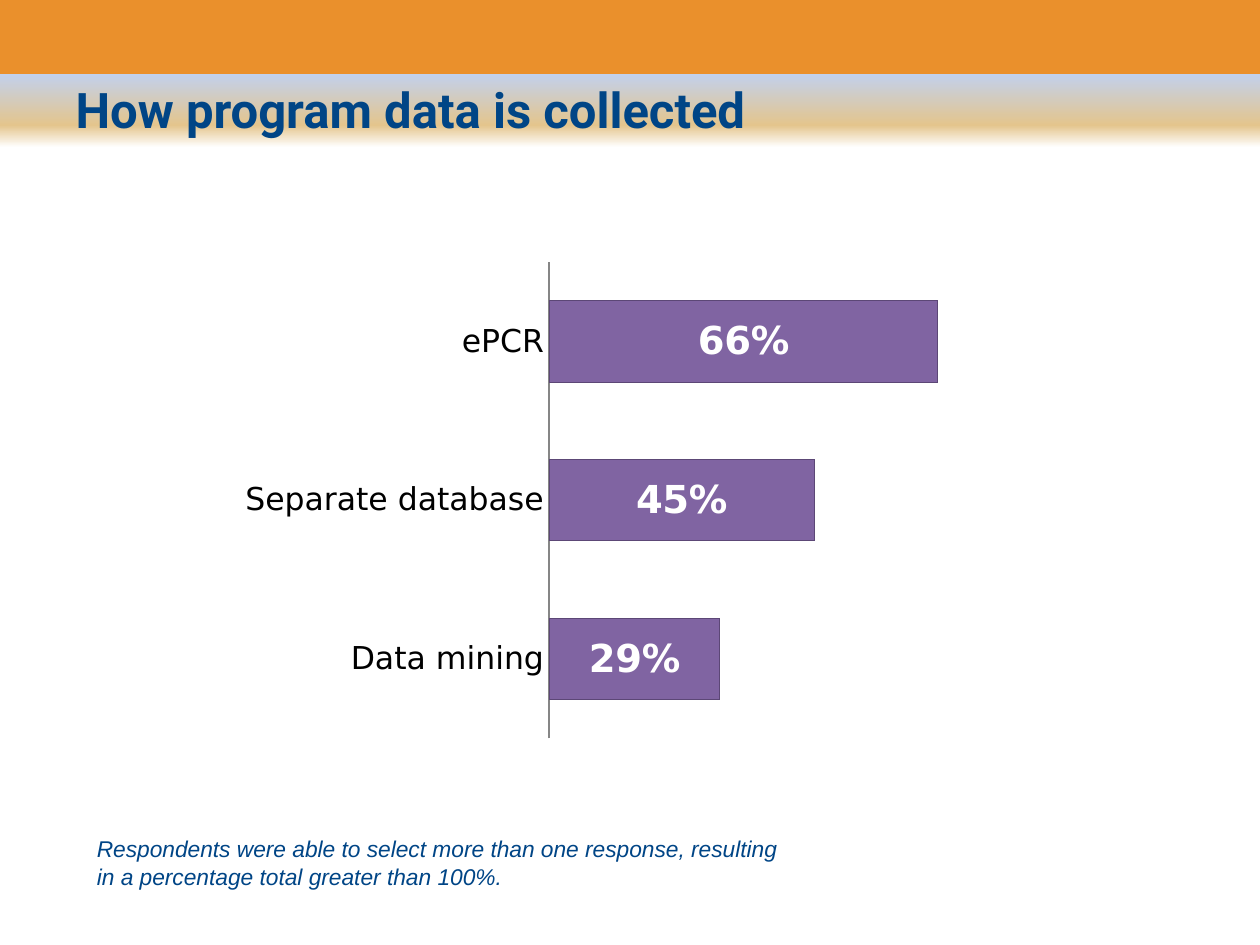
from lxml.etree import SubElement
from pptx import Presentation
from pptx.chart.data import CategoryChartData
from pptx.dml.color import RGBColor
from pptx.enum.chart import XL_CHART_TYPE, XL_LABEL_POSITION, XL_TICK_MARK
from pptx.enum.shapes import MSO_SHAPE
from pptx.enum.text import MSO_ANCHOR, PP_ALIGN
from pptx.oxml import parse_xml
from pptx.oxml.ns import nsdecls, qn
from pptx.util import Inches, Pt

COLORS = {
    "navy": "004586", "orange": "EA902C", "sky": "C2D1ED", "sand": "E4C58D",
    "white": "FFFFFF", "black": "000000", "purple": "8064A2",
    "bar_edge": "5C4776", "axis": "868686",
}
BAND_STOPS = [(50, "orange"), (50, "sky"), (85, "sand"), (100, "white")]
COLLECTION_SHARES = {"Data mining": 0.29, "Separate database": 0.45, "ePCR": 0.66}


def rgb(name):
    return RGBColor.from_string(COLORS[name])


class SlideBuilder:
    """Places styled elements by shares of the slide's width and height."""

    def __init__(self, deck, layout):
        self.width, self.height = deck.slide_width, deck.slide_height
        self.slide = deck.slides.add_slide(layout)
        self.shapes = self.slide.shapes

    def area(self, left, top, width, height):
        return (round(left * self.width), round(top * self.height),
                round(width * self.width), round(height * self.height))

    def style(self, font, size, color, face, bold=False, italic=False):
        font.size, font.name = Pt(size), face
        font.bold, font.italic = bold, italic
        font.color.rgb = rgb(color)

    def band(self, area, stops):
        """Draw a downward gradient band behind everything else."""
        band = self.shapes.add_shape(MSO_SHAPE.RECTANGLE, *self.area(*area))
        band.shadow.inherit = False
        band.line.fill.background()
        stop_xml = "".join(
            f'<a:gs pos="{share * 1000}"><a:srgbClr val="{COLORS[color]}"/></a:gs>'
            for share, color in stops)
        band.fill.gradient()
        gradient = band._element.spPr.find(qn("a:gradFill"))
        gradient.getparent().replace(gradient, parse_xml(
            f'<a:gradFill {nsdecls("a")} rotWithShape="1"><a:gsLst>{stop_xml}</a:gsLst>'
            '<a:lin ang="5400000" scaled="0"/></a:gradFill>'))
        self.shapes._spTree.insert(2, band._element)

    def title(self, area, text):
        title = self.shapes.title
        title.left, title.top, title.width, title.height = self.area(*area)
        title.text_frame.text = text
        title.text_frame.vertical_anchor = MSO_ANCHOR.TOP
        heading = title.text_frame.paragraphs[0]
        heading.alignment = PP_ALIGN.LEFT
        self.style(heading.font, 28, "navy", "Roboto", bold=True)

    def note(self, area, text):
        frame = self.shapes.add_textbox(*self.area(*area)).text_frame
        frame.word_wrap = True
        frame.text = text
        self.style(frame.paragraphs[0].font, 13, "navy", "Arial", italic=True)

    def bar_chart(self, area, shares, plot_area):
        data = CategoryChartData(number_format="0%")
        data.categories = list(shares)
        data.add_series("Series 1", list(shares.values()))
        chart = self.shapes.add_chart(
            XL_CHART_TYPE.BAR_STACKED, *self.area(*area), data).chart
        chart.has_legend = chart.has_title = False
        self.style(chart.font, 18, "black", "Calibri")

        categories, values = chart.category_axis, chart.value_axis
        categories.major_tick_mark = categories.minor_tick_mark = XL_TICK_MARK.NONE
        categories.format.line.color.rgb = rgb("axis")
        self.style(categories.tick_labels.font, 18, "black", "DejaVu Sans")
        values.minimum_scale, values.maximum_scale = 0, 0.7
        values.has_major_gridlines = values.visible = False

        plot = chart.plots[0]
        plot.gap_width, plot.overlap, plot.vary_by_categories = 95, 100, False
        bars = plot.series[0]
        bars.format.fill.solid()
        bars.format.fill.fore_color.rgb = rgb("purple")
        bars.format.line.color.rgb = rgb("bar_edge")
        labels = bars.data_labels
        labels.show_value = True
        labels.number_format, labels.number_format_is_linked = "0%", False
        labels.position = XL_LABEL_POSITION.CENTER
        self.style(labels.font, 22, "white", "DejaVu Sans", bold=True)
        self.fix_plot_area(chart, plot_area)

    def fix_plot_area(self, chart, shares):
        """Pin the inner plot area to shares of the chart frame."""
        plot_area = chart._chartSpace.chart.plotArea
        for automatic in plot_area.findall(qn("c:layout")):
            plot_area.remove(automatic)
        layout = parse_xml(f'<c:layout {nsdecls("c")}/>')
        manual = SubElement(layout, qn("c:manualLayout"))
        settings = [("layoutTarget", "inner"), ("xMode", "edge"), ("yMode", "edge")]
        for tag, value in settings + list(zip("xywh", shares)):
            SubElement(manual, qn(f"c:{tag}")).set("val", str(value))
        plot_area.insert(0, layout)


def main():
    deck = Presentation()
    deck.slide_width, deck.slide_height = Inches(10), Inches(7.5)
    builder = SlideBuilder(deck, deck.slide_layouts[5])
    builder.band((0, 0, 1, 0.156), BAND_STOPS)
    builder.title((0.05, 0.077, 0.9, 0.167), "How program data is collected")
    builder.bar_chart((0.183, 0.267, 0.592, 0.525), COLLECTION_SHARES,
                      plot_area=(0.427, 0.02, 0.553, 0.96))
    builder.note((0.067, 0.877, 0.575, 0.072),
                 "Respondents were able to select more than one response, "
                 "resulting in a percentage total greater than 100%.")
    deck.save("out.pptx")


if __name__ == "__main__":
    main()
